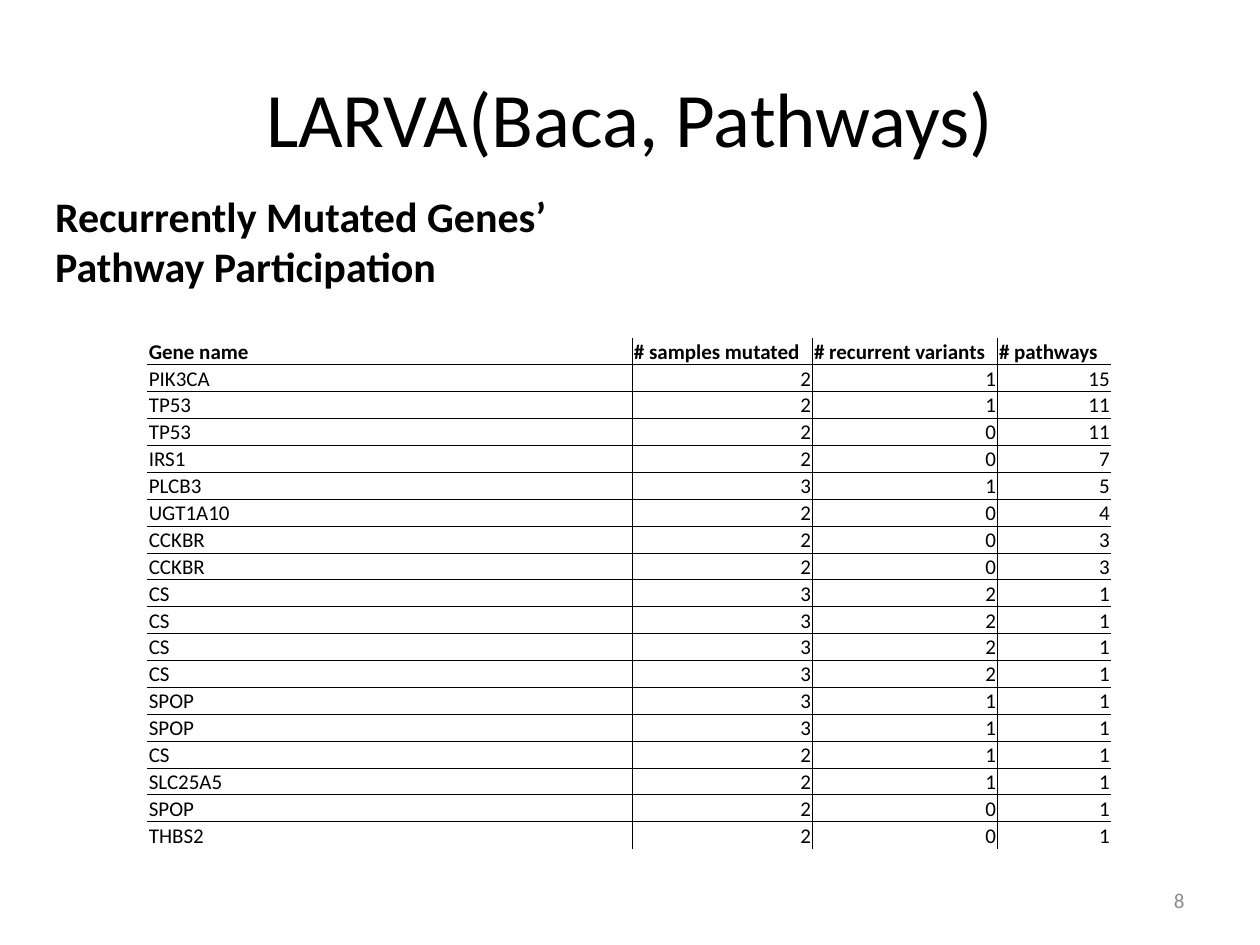
import pptx
import pptx.util
import pptx.dml.color
import pptx.enum.text
import pptx.oxml.ns
import lxml.etree

Cm, Pt = pptx.util.Cm, pptx.util.Pt
Align = pptx.enum.text.PP_ALIGN
Anchor = pptx.enum.text.MSO_ANCHOR

HUES = {"ink": "000000", "grey": "8C8C8C"}
FONT = "Calibri"

TITLE = "LARVA(Baca, Pathways)"
LEAD = ["Recurrently Mutated Genes’", "Pathway Participation"]
PAGE = "8"
HEAD = ("Gene name", "# samples mutated", "# recurrent variants", "# pathways")
GENES = [
    ("PIK3CA", 2, 1, 15),
    ("TP53", 2, 1, 11),
    ("TP53", 2, 0, 11),
    ("IRS1", 2, 0, 7),
    ("PLCB3", 3, 1, 5),
    ("UGT1A10", 2, 0, 4),
    ("CCKBR", 2, 0, 3),
    ("CCKBR", 2, 0, 3),
    ("CS", 3, 2, 1),
    ("CS", 3, 2, 1),
    ("CS", 3, 2, 1),
    ("CS", 3, 2, 1),
    ("SPOP", 3, 1, 1),
    ("SPOP", 3, 1, 1),
    ("CS", 2, 1, 1),
    ("SLC25A5", 2, 1, 1),
    ("SPOP", 2, 0, 1),
    ("THBS2", 2, 0, 1),
]
WIDTHS = [9.78, 3.63, 3.73, 2.29]
HIGH = 10.31


def add_run(para, text, size, hue="ink", bold=False, align=Align.LEFT):
    para.alignment = align
    run = para.add_run()
    run.text = text
    font = run.font
    font.name, font.size, font.bold = FONT, Pt(size), bold
    font.color.rgb = pptx.dml.color.RGBColor.from_string(HUES[hue])


def add_box(slide, *place):
    return slide.shapes.add_textbox(*map(Cm, place)).text_frame


def add_edge(cell, side, shown):
    """Draw one cell border, or hide it where the table ends."""
    tag = pptx.oxml.ns.qn
    props = cell._tc.get_or_add_tcPr()
    line = lxml.etree.SubElement(props, tag("a:ln" + side), w=str(Pt(0.5)))
    if shown:
        fill = lxml.etree.SubElement(line, tag("a:solidFill"))
        lxml.etree.SubElement(fill, tag("a:srgbClr"), val=HUES["ink"])
    else:
        lxml.etree.SubElement(line, tag("a:noFill"))


def add_grid(slide):
    rows = [HEAD] + GENES
    last_row, last_col = len(rows) - 1, len(HEAD) - 1
    table = slide.shapes.add_table(
        len(rows), len(HEAD), Cm(2.97), Cm(6.81), Cm(sum(WIDTHS)), Cm(HIGH)
    ).table
    table.first_row = table.horz_banding = False
    for col, width in zip(table.columns, WIDTHS):
        col.width = Cm(width)
    for r, row in enumerate(rows):
        table.rows[r].height = Cm(HIGH / len(rows))
        for c, value in enumerate(row):
            cell = table.cell(r, c)
            cell.margin_left = cell.margin_right = cell.margin_top = Cm(0.03)
            cell.margin_bottom = 0
            cell.vertical_anchor = Anchor.BOTTOM
            inner = {"L": c > 0, "R": c < last_col, "T": r > 0, "B": r < last_row}
            for side, shown in inner.items():
                add_edge(cell, side, shown)
            cell.fill.background()
            align = Align.RIGHT if isinstance(value, int) else Align.LEFT
            add_run(cell.text_frame.paragraphs[0], str(value), 12,
                    bold=r == 0, align=align)


def main():
    deck = pptx.Presentation()
    deck.slide_width, deck.slide_height = Cm(25.4), Cm(19.05)
    slide = deck.slides.add_slide(deck.slide_layouts[5])

    title = slide.shapes.title
    title.left, title.top = Cm(1.27), Cm(0.76)
    title.width, title.height = Cm(22.86), Cm(3.18)
    title.text_frame.vertical_anchor = Anchor.MIDDLE
    add_run(title.text_frame.paragraphs[0], TITLE, 44, align=Align.CENTER)

    page = add_box(slide, 18.2, 17.65, 5.93, 1.01)
    page.word_wrap = True
    page.vertical_anchor = Anchor.MIDDLE
    add_run(page.paragraphs[0], PAGE, 12, "grey", align=Align.RIGHT)

    lead = add_box(slide, 0.86, 3.71, 10.57, 2.31)
    lead.word_wrap = False
    lead.auto_size = pptx.enum.text.MSO_AUTO_SIZE.SHAPE_TO_FIT_TEXT
    for i, text in enumerate(LEAD):
        para = lead.add_paragraph() if i else lead.paragraphs[0]
        add_run(para, text, 24, bold=True)

    add_grid(slide)
    deck.save("out.pptx")


if __name__ == "__main__":
    main()
